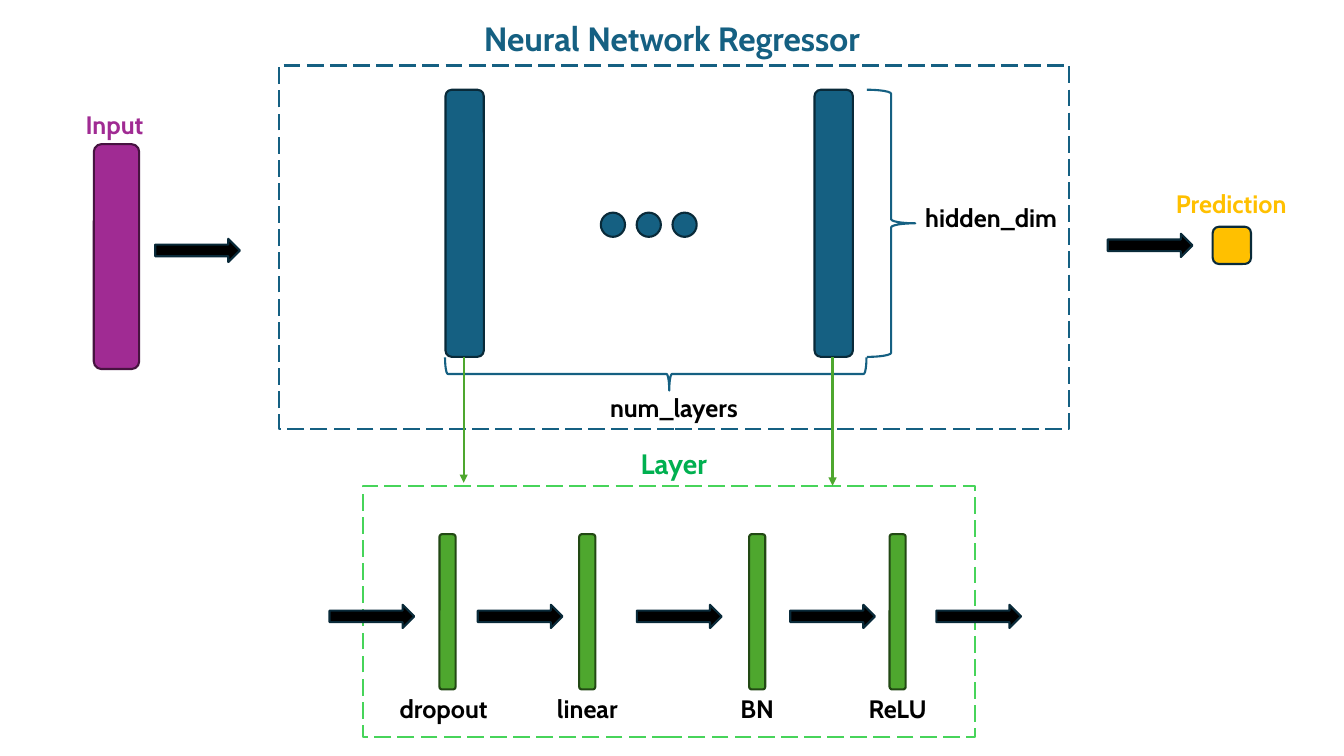
from dataclasses import dataclass

from lxml import etree
from pptx import Presentation
from pptx.dml.color import RGBColor
from pptx.enum.dml import MSO_LINE_DASH_STYLE as Dash
from pptx.enum.shapes import MSO_CONNECTOR as Connector, MSO_SHAPE as Shape
from pptx.enum.text import PP_ALIGN as Align
from pptx.oxml.ns import qn
from pptx.util import Pt


@dataclass(frozen=True)
class Theme:
    font: str = "Cabin"
    black: str = "000000"
    blue: str = "156082"
    navy: str = "092A39"
    purple: str = "A02B93"
    plum: str = "461340"
    gold: str = "FFC000"
    green: str = "4EA72E"
    forest: str = "224914"
    lime: str = "47D45A"
    emerald: str = "00B050"
    title: int = 24
    heading: int = 20
    label: int = 18
    stroke: float = 1.5


T = Theme()


def rgb(value):
    return RGBColor.from_string(value)


def add_block(s, kind, box, fill, line):
    """Add a preset shape; a fill of None leaves it open."""
    sp = s.shapes.add_shape(kind, *map(Pt, box))
    sp.shadow.inherit = False
    if fill:
        sp.fill.solid()
        sp.fill.fore_color.rgb = rgb(fill)
    else:
        sp.fill.background()
    sp.line.color.rgb = rgb(line)
    sp.line.width = Pt(T.stroke)
    return sp


def add_frame(s, box, line):
    add_block(s, Shape.RECTANGLE, box, None, line).line.dash_style = Dash.LONG_DASH


def add_brace(s, box, rotation, tip=0.5):
    sp = add_block(s, Shape.LEFT_BRACE, box, None, T.blue)
    sp.rotation = rotation
    sp.adjustments[1] = tip


def add_flow_arrow(s, x, y):
    add_block(s, Shape.RIGHT_ARROW, (x, y, 60.5, 16.6), T.black, T.navy)


def add_label(s, text, x, y, width, color=T.black, size=T.label, align=Align.CENTER):
    tf = s.shapes.add_textbox(Pt(x), Pt(y), Pt(width), Pt(size * 1.2 + 7.2)).text_frame
    tf.word_wrap = True
    p = tf.paragraphs[0]
    p.text = text
    p.alignment = align
    font = p.runs[0].font
    font.name, font.size, font.bold = T.font, Pt(size), True
    font.color.rgb = rgb(color)


def add_down_arrow(s, x, top, bottom):
    cx = s.shapes.add_connector(Connector.STRAIGHT, Pt(x), Pt(top), Pt(x), Pt(bottom))
    cx.line.color.rgb = rgb(T.green)
    cx.line.width = Pt(T.stroke)
    etree.SubElement(cx.line._get_or_add_ln(), qn("a:tailEnd"), type="triangle")
    etree.SubElement(cx._element.spPr, qn("a:effectLst"))


def add_network(s):
    top, width, height = 64.1, 27.4, 190.8
    for x in (318.2, 581.8):
        add_block(s, Shape.ROUNDED_RECTANGLE, (x, top, width, height), T.blue, T.navy)
    for i in range(3):
        add_block(s, Shape.OVAL, (429.2 + 25.6 * i, 151.9, 17.3, 17.3), T.blue, T.navy)
    add_brace(s, (456.5, 116.6, 23.8, 301), 270, 0.532)
    add_label(s, "num_layers", 423.4, 276.5, 115.9)
    add_brace(s, (619.2, top, 34.6, height), 180)
    add_label(s, "hidden_dim", 653.8, 141.1, 124.6, align=Align.LEFT)
    add_frame(s, (199.4, 46.8, 564.5, 259.9), T.blue)
    add_label(s, "Neural Network Regressor", 270, 9.4, 419.8, T.blue, T.title)


def add_input_and_prediction(s):
    add_block(s, Shape.ROUNDED_RECTANGLE, (67, 103, 32.4, 160.6), T.purple, T.plum)
    add_label(s, "Input", 23.8, 74.2, 115.9, T.purple)
    add_flow_arrow(s, 110.9, 170.6)
    add_flow_arrow(s, 791.3, 167)
    add_block(s, Shape.ROUNDED_RECTANGLE, (866.2, 162, 27.4, 26.6), T.gold, T.navy)
    add_label(s, "Prediction", 821.5, 131, 115.9, T.gold)


def add_layer_detail(s):
    bar_width, label_width = 11.5, 82.8
    add_frame(s, (259.2, 347, 437, 179.3), T.lime)
    add_label(s, "Layer", 262.8, 315.4, 437, T.emerald, T.heading)
    operations = (
        ("dropout", 319.7, Align.LEFT),
        ("linear", 419.5, Align.CENTER),
        ("BN", 540.9, Align.CENTER),
        ("ReLU", 641.2, Align.CENTER),
    )
    for name, center, align in operations:
        bar = (center - bar_width / 2, 381.6, bar_width, 110.9)
        add_block(s, Shape.ROUNDED_RECTANGLE, bar, T.green, T.forest)
        add_label(s, name, center - label_width / 2, 491.8, label_width, align=align)
    for x in (235.4, 341.3, 455, 564.5, 668.9):
        add_flow_arrow(s, x, 432)
    for x, bottom in ((331.2, 344.9), (594.7, 347)):
        add_down_arrow(s, x, 254.9, bottom)


def main():
    prs = Presentation()
    prs.slide_width, prs.slide_height = Pt(960), Pt(540)
    s = prs.slides.add_slide(prs.slide_layouts[6])
    add_network(s)
    add_input_and_prediction(s)
    add_layer_detail(s)
    prs.save("out.pptx")


if __name__ == "__main__":
    main()
